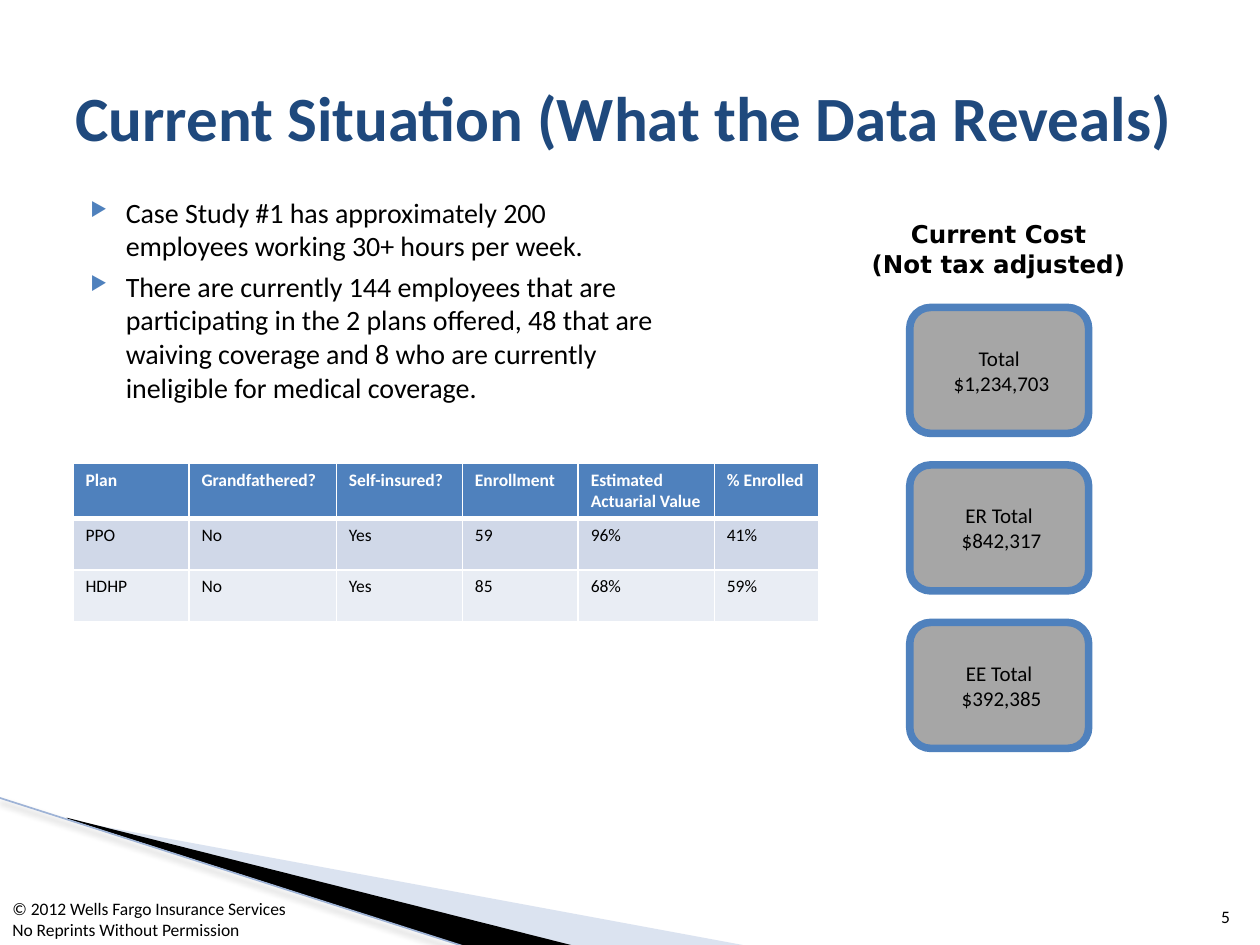
"""Build the Current Situation slide with its plan table and cost boxes."""
from lxml.etree import SubElement as Sub
from pptx import Presentation
from pptx.dml.color import RGBColor as RGB
from pptx.enum.shapes import MSO_CONNECTOR as CONN, MSO_SHAPE as SHAPE
from pptx.enum.text import MSO_ANCHOR as ANCHOR, PP_ALIGN as ALIGN
from pptx.oxml import parse_xml
from pptx.oxml.ns import nsdecls, qn
from pptx.util import Inches, Pt

HUES = {
    "black": "000000", "white": "FFFFFF", "blue": "4F81BD", "navy": "1F497D",
    "pale": "A7B9DB", "edge": "9EB3D6", "gray": "A6A6A6",
    "band": "D0D8E8", "light": "E9EDF4",
}


def paint(fill, hue):
    fill.solid()
    fill.fore_color.rgb = RGB.from_string(HUES[hue])


def write(frame, lines, size, hue="black", bold=False, face="Calibri", align=ALIGN.LEFT):
    look = {"size": Pt(size), "bold": bold, "name": face}
    for i, line in enumerate(lines):
        para = frame.paragraphs[0] if i == 0 else frame.add_paragraph()
        para.alignment = align
        run = para.add_run()
        run.text = line
        for key, val in look.items():
            setattr(run.font, key, val)
        run.font.color.rgb = RGB.from_string(HUES[hue])


deck = Presentation()
deck.slide_width, deck.slide_height = Inches(10), Inches(7.5)
slide = deck.slides.add_slide(deck.slide_layouts[6])
shapes = slide.shapes

wedges = [
    ("pale", 40, [(0.55, 6.51), (5.95, 7.51), (4.56, 7.51), (0.55, 6.5)]),
    ("black", 100, [(0.53, 6.49), (4.57, 7.51), (3.72, 7.52), (0.54, 6.5)]),
]
for hue, alpha, dots in wedges:
    pts = [(Inches(x), Inches(y)) for x, y in dots]
    pen = shapes.build_freeform(*pts[0], scale=1.0)
    pen.add_line_segments(pts[1:], close=True)
    wedge = pen.convert_to_shape()
    wedge.shadow.inherit = False
    wedge.line.fill.background()
    paint(wedge.fill, hue)
    if alpha < 100:
        tint = wedge.fill._xPr.find(qn("a:solidFill"))[0]
        Sub(tint, qn("a:alpha"), val=str(alpha * 1000))

edge = shapes.add_connector(
    CONN.STRAIGHT, Inches(-0.01), Inches(6.33), Inches(3.71), Inches(7.52))
edge.line.width = Pt(0.95)
paint(edge.line.fill, "edge")
edge.line._ln.addnext(parse_xml(
    f'<a:effectLst {nsdecls("a")}><a:outerShdw blurRad="{Pt(4)}" dist="{Pt(3)}" '
    'dir="5400000" rotWithShape="0"><a:srgbClr val="000000"><a:alpha val="35000"/>'
    '</a:srgbClr></a:outerShdw></a:effectLst>'))

points = [
    "Case Study #1 has approximately 200 employees working 30+ hours per week.",
    "There are currently 144 employees that are participating in the 2 plans offered, "
    "48 that are waiving coverage and 8 who are currently ineligible for medical coverage.",
]
texts = [
    ((0.5, 1.5, 4.83, 4.95), ANCHOR.TOP, points, {"size": 16}),
    ((0.5, 0.3, 9, 1.25), ANCHOR.MIDDLE, ["Current Situation (What the Data Reveals)"],
     {"size": 36, "hue": "navy", "bold": True}),
    ((9.46, 7.01, 0.4, 0.4), ANCHOR.BOTTOM, ["5"], {"size": 10, "align": ALIGN.RIGHT}),
    ((6.8, 1.69, 2.25, 0.57), ANCHOR.TOP, ["Current Cost", "(Not tax adjusted)"],
     {"size": 14, "bold": True, "face": "DejaVu Sans", "align": ALIGN.CENTER}),
    ((0, 7.08, 5, 0.44), ANCHOR.TOP,
     ["© 2012 Wells Fargo Insurance Services", "No Reprints Without Permission"],
     {"size": 10}),
]
for place, anchor, lines, look in texts:
    frame = shapes.add_textbox(*map(Inches, place)).text_frame
    frame.word_wrap = True
    frame.vertical_anchor = anchor
    write(frame, lines, **look)
    if lines is points:
        for i, para in enumerate(frame.paragraphs):
            props = para._p.get_or_add_pPr()
            props.set("marL", str(Inches(0.4)))
            props.set("indent", str(Inches(-0.28)))
            tint = Sub(props, qn("a:buClr"))
            Sub(tint, qn("a:srgbClr"), val=HUES["blue"])
            Sub(props, qn("a:buSzPct"), val="68000")
            Sub(props, qn("a:buChar"), char="▶")
            para.space_before = Pt(4 if i else 0)

costs = [("Total", " $1,234,703"), ("ER Total", " $842,317"), ("EE Total", " $392,385")]
for i, lines in enumerate(costs):
    box = shapes.add_shape(SHAPE.ROUNDED_RECTANGLE, Inches(7.22),
                           Inches(2.44 + 1.25 * i), Inches(1.42), Inches(1))
    box.shadow.inherit = False
    paint(box.fill, "gray")
    paint(box.line.fill, "blue")
    box.line.width = Pt(4.33)
    box.text_frame.word_wrap = False
    box.text_frame.vertical_anchor = ANCHOR.MIDDLE
    write(box.text_frame, lines, 12, align=ALIGN.CENTER)

plans = [
    ("Plan", "Grandfathered?", "Self-insured?", "Enrollment",
     "Estimated Actuarial Value", "% Enrolled"),
    ("PPO", "No", "Yes", "59", "96%", "41%"),
    ("HDHP", "No", "Yes", "85", "68%", "59%"),
]
wides = [0.92, 1.17, 1, 0.92, 1.08, 0.83]
grid = shapes.add_table(len(plans), len(wides), Inches(0.58), Inches(3.68),
                        Inches(sum(wides)), Inches(1.24)).table
for col, wide in zip(grid.columns, wides):
    col.width = Inches(wide)
for r, (row, hue) in enumerate(zip(plans, ["blue", "band", "light"])):
    grid.rows[r].height = Inches(0.41)
    head = r == 0
    for c, word in enumerate(row):
        cell = grid.cell(r, c)
        write(cell.text_frame, [word], 10, "white" if head else "black", head)
        props = cell._tc.get_or_add_tcPr()
        for side in "LRTB":
            thick = 3 if (r, side) in [(0, "B"), (1, "T")] else 1
            rule = Sub(props, qn(f"a:ln{side}"), w=str(Pt(thick)))
            Sub(Sub(rule, qn("a:solidFill")), qn("a:srgbClr"), val=HUES["white"])
        paint(cell.fill, hue)

deck.save("out.pptx")
